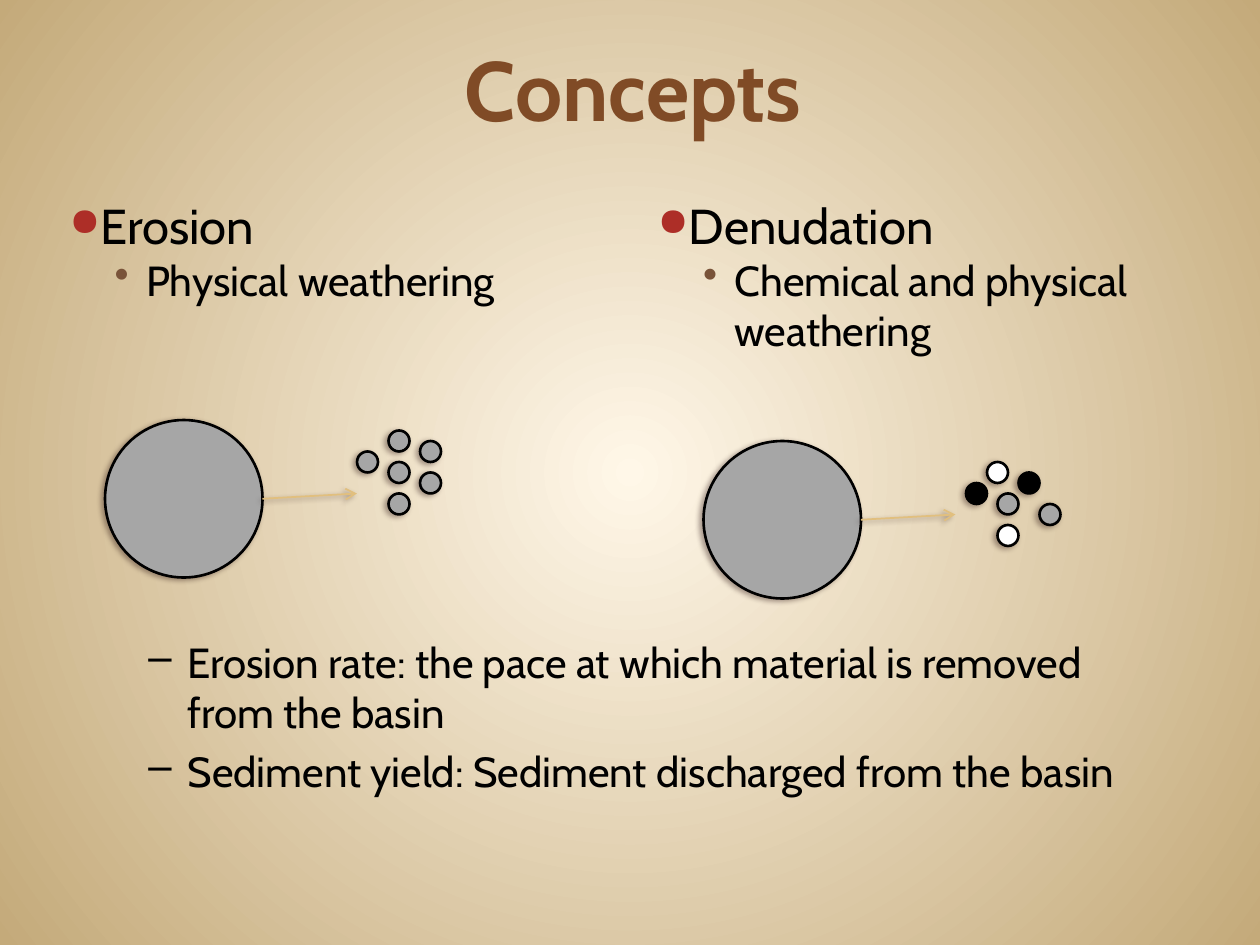
"""Build the Concepts slide comparing erosion with denudation."""
from lxml import etree
from pptx import Presentation
from pptx.dml.color import RGBColor
from pptx.enum.shapes import MSO_CONNECTOR, MSO_SHAPE
from pptx.enum.text import MSO_ANCHOR, PP_ALIGN
from pptx.oxml import parse_xml
from pptx.oxml.ns import nsdecls, qn
from pptx.util import Inches, Pt

OVAL = MSO_SHAPE.OVAL
STRAIGHT = MSO_CONNECTOR.STRAIGHT
BOTTOM = MSO_ANCHOR.BOTTOM
CENTER = PP_ALIGN.CENTER

FONT = "Cabin"
COLORS = {
    "center": "FFF7E8", "edge": "C4AA7A", "title": "804B26", "text": "000000",
    "bullet": "AD2E27", "sub_bullet": "795339", "rock": "A6A6A6",
    "black": "000000", "white": "FFFFFF", "arrow": "E1BF7E", "shadow": "1A0000",
}
UNIT = 1 / 12
ROCK_SIZE, GRAIN_SIZE = 15, 2

TITLE = "Concepts"
COLUMNS = [
    ("Denudation", "Chemical and physical weathering", (5.17, 1.5, 4.42, 1.83)),
    ("Erosion", "Physical weathering", (0.5, 1.5, 4.42, 1.5)),
]
DEFINITIONS = [
    "Erosion rate: the pace at which material is removed from the basin",
    "Sediment yield: Sediment discharged from the basin",
]
# Rock corner in grid units, then each grain's offset from it and its colour
DIAGRAMS = [
    ((10, 40), [(24, 3, "rock"), (27, 1, "rock"), (27, 4, "rock"),
                (30, 2, "rock"), (27, 7, "rock"), (30, 5, "rock")]),
    ((67, 42), [(28, 5, "rock"), (28, 8, "white"), (30, 3, "black"),
                (32, 6, "rock"), (25, 4, "black"), (27, 2, "white")]),
]


def rgb(name):
    return RGBColor.from_string(COLORS[name])


def grid(*units):
    return [Inches(unit * UNIT) for unit in units]


def set_background(slide):
    stops = "".join(
        f'<a:gs pos="{pos}"><a:srgbClr val="{COLORS[name]}"/></a:gs>'
        for pos, name in ((0, "center"), (100000, "edge")))
    slide.element.cSld.insert(0, parse_xml(
        f'<p:bg {nsdecls("p", "a")}><p:bgPr><a:gradFill rotWithShape="1">'
        f'<a:gsLst>{stops}</a:gsLst><a:path path="circle"><a:fillToRect l="50000" '
        't="50000" r="50000" b="50000"/></a:path></a:gradFill><a:effectLst/>'
        '</p:bgPr></p:bg>'))


def add_shadow(properties):
    for old in properties.findall(qn("a:effectLst")):
        properties.remove(old)
    properties.append(parse_xml(
        f'<a:effectLst {nsdecls("a")}><a:outerShdw blurRad="{Pt(3.1)}" '
        f'dist="{Pt(2)}" dir="{150 * 60000}" rotWithShape="0">'
        f'<a:srgbClr val="{COLORS["shadow"]}"><a:alpha val="35000"/></a:srgbClr>'
        '</a:outerShdw></a:effectLst>'))


def add_circle(slide, x, y, size, color):
    circle = slide.shapes.add_shape(OVAL, *grid(x, y, size, size))
    circle.fill.solid()
    circle.fill.fore_color.rgb = rgb(color)
    circle.line.color.rgb = rgb("black")
    circle.line.width = Pt(1.5)
    add_shadow(circle.element.spPr)


def add_arrow(slide, x, y):
    arrow = slide.shapes.add_connector(
        STRAIGHT, *grid(x + ROCK_SIZE, y + ROCK_SIZE / 2, x + 24, y + 7))
    arrow.line.color.rgb = rgb("arrow")
    arrow.line.width = Pt(1)
    etree.SubElement(arrow.line._get_or_add_ln(), qn("a:tailEnd"), type="arrow")
    add_shadow(arrow.element.spPr)


def add_bullets(slide, box, items, inset):
    frame = slide.shapes.add_textbox(*map(Inches, box)).text_frame
    frame.word_wrap = True
    if inset:
        frame.margin_left = frame.margin_right = Inches(inset)
        frame.margin_top = frame.margin_bottom = Inches(inset)
    for index, item in enumerate(items):
        paragraph = frame.add_paragraph() if index else frame.paragraphs[0]
        paragraph.text = item["text"]
        paragraph.level = item["level"]
        paragraph.font.name = FONT
        paragraph.font.size = Pt(item["size"])
        paragraph.font.color.rgb = rgb("text")
        paragraph.space_before = Pt(item.get("before", 0))
        properties = paragraph._p.get_or_add_pPr()
        margin, indent = item["indent"]
        properties.set("marL", str(Inches(margin)))
        properties.set("indent", str(Inches(indent)))
        bullet_color = etree.SubElement(properties, qn("a:buClr"))
        etree.SubElement(bullet_color, qn("a:srgbClr"), val=COLORS[item["color"]])
        etree.SubElement(properties, qn("a:buSzPct"), val=str(item.get("scale", 100) * 1000))
        etree.SubElement(properties, qn("a:buChar"), char=item["bullet"])
        properties.append(properties.find(qn("a:defRPr")))


def main():
    deck = Presentation()
    deck.slide_width, deck.slide_height = Inches(10), Inches(7.5)
    slide = deck.slides.add_slide(deck.slide_layouts[5])
    set_background(slide)

    title = slide.shapes.title
    title.left, title.top, title.width, title.height = map(Inches, (0.55, 0, 8.95, 1.15))
    title.text_frame.text = TITLE
    title.text_frame.vertical_anchor = BOTTOM
    heading = title.text_frame.paragraphs[0]
    heading.alignment = CENTER
    heading.font.name = FONT
    heading.font.size = Pt(48)
    heading.font.bold = True
    heading.font.color.rgb = rgb("title")

    for term, process, box in COLUMNS:
        add_bullets(slide, box, [
            dict(text=term, level=0, size=28, indent=(0, -0.3),
                 bullet="●", color="bullet", scale=80),
            dict(text=process, level=1, size=24, indent=(0.61, -0.25),
                 bullet="•", color="sub_bullet"),
        ], 0.05)

    for (x, y), grains in DIAGRAMS:
        add_circle(slide, x, y, ROCK_SIZE, "rock")
        add_arrow(slide, x, y)
        for dx, dy, color in grains:
            add_circle(slide, x + dx, y + dy, GRAIN_SIZE, color)

    add_bullets(slide, (0.58, 5, 8.75, 1.58), [
        dict(text=definition, level=1, size=24, indent=(0.81, -0.31),
             bullet="–", color="text", before=4.8)
        for definition in DEFINITIONS
    ], None)
    deck.save("out.pptx")


if __name__ == "__main__":
    main()
